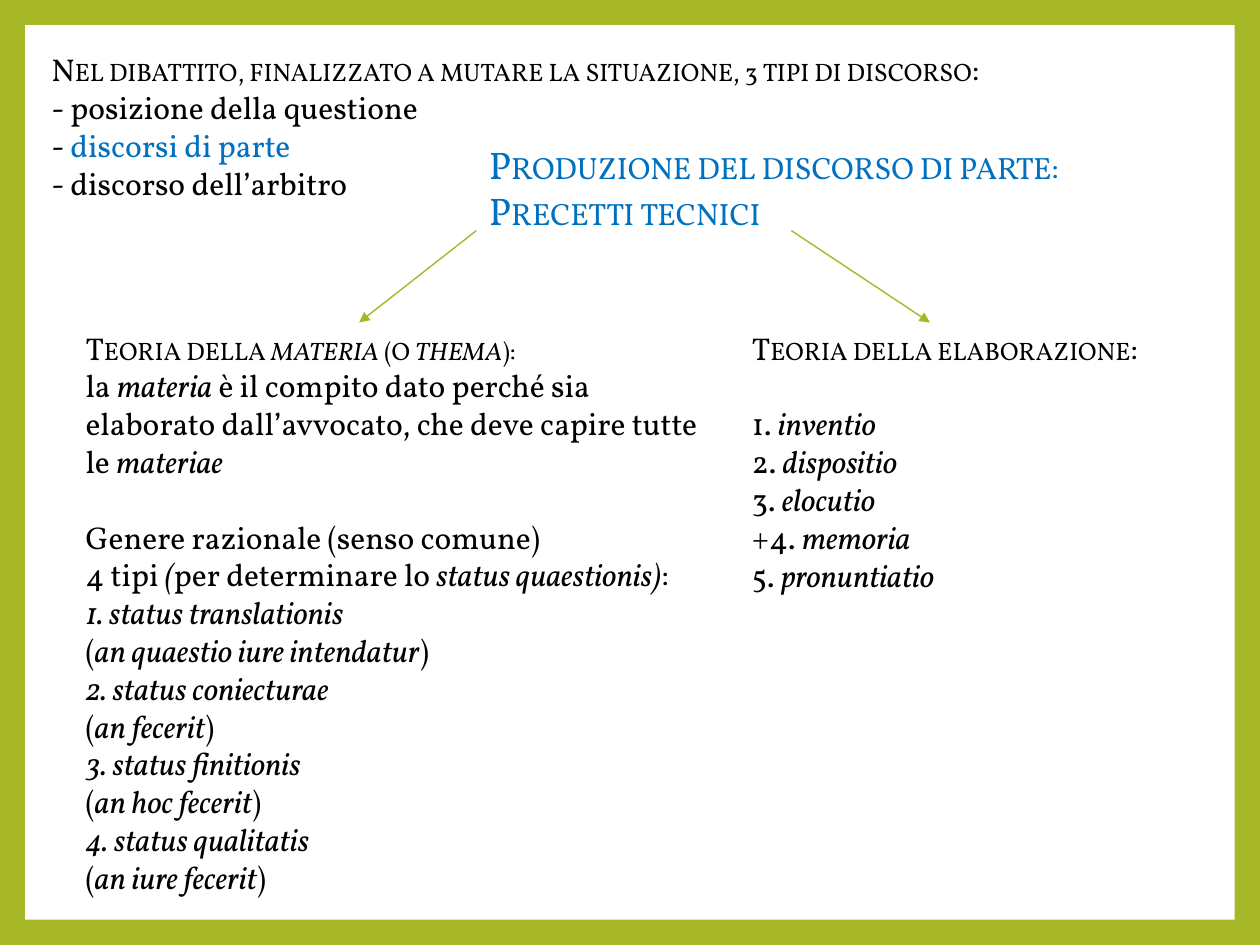
from lxml import etree
from pptx import Presentation
from pptx.dml.color import RGBColor
from pptx.enum.shapes import MSO_CONNECTOR, MSO_SHAPE
from pptx.oxml.ns import qn
from pptx.util import Pt

COLORS = {"green": "A6B727", "white": "FFFFFF", "black": "000000", "blue": "0070C0"}
FONT = "Vollkorn"
BLANK_LINE = 21.6


def rgb(name):
    return RGBColor.from_string(COLORS[name])


class SlideBuilder:
    """Holds the style and the current slide; lengths are in points."""

    def __init__(self, slide):
        self.slide = slide

    def background(self, color):
        fill = self.slide.background.fill
        fill.solid()
        fill.fore_color.rgb = rgb(color)

    def panel(self, left, top, width, height, color):
        panel = self.slide.shapes.add_shape(
            MSO_SHAPE.RECTANGLE, Pt(left), Pt(top), Pt(width), Pt(height))
        panel.shadow.inherit = False
        panel.fill.solid()
        panel.fill.fore_color.rgb = rgb(color)
        panel.line.fill.background()

    def text(self, left, top, width, height, lines, size=18, color="black", gaps=()):
        """Each line is a list of (text, flags): i italic, s small caps, b blue.

        Lines whose index is in gaps get one line of space before them.
        """
        frame = self.slide.shapes.add_textbox(
            Pt(left), Pt(top), Pt(width), Pt(height)).text_frame
        frame.word_wrap = True
        for index, line in enumerate(lines):
            paragraph = frame.add_paragraph() if index else frame.paragraphs[0]
            if index in gaps:
                paragraph.space_before = Pt(BLANK_LINE)
            for words, flags in line:
                run = paragraph.add_run()
                run.text = words
                run.font.name = FONT
                run.font.size = Pt(size)
                run.font.italic = "i" in flags
                run.font.color.rgb = rgb("blue" if "b" in flags else color)
                if "s" in flags:
                    run.font._element.set("cap", "small")

    def arrow(self, start, end, color="green", weight=0.79):
        arrow = self.slide.shapes.add_connector(
            MSO_CONNECTOR.STRAIGHT, *(Pt(value) for value in start + end))
        arrow.line.color.rgb = rgb(color)
        arrow.line.width = Pt(weight)
        etree.SubElement(arrow.line._get_or_add_ln(), qn("a:tailEnd"), type="triangle")
        etree.SubElement(arrow._element.spPr, qn("a:effectLst"))


def main():
    deck = Presentation()
    deck.slide_width, deck.slide_height = Pt(720), Pt(540)
    page = SlideBuilder(deck.slides.add_slide(deck.slide_layouts[6]))

    # Green frame around a white page
    page.background("green")
    page.panel(14.4, 14.4, 691.2, 511.2, "white")

    # Central topic
    page.text(272.2, 77, 418.3, 60.5, [
        [("Produzione del discorso di parte:", "s")],
        [("Precetti tecnici", "s")],
    ], size=22, color="blue")

    # Left branch: theory of the matter
    statuses = [
        ("translationis", "an quaestio iure intendatur"),
        ("coniecturae", "an fecerit"),
        ("finitionis", "an hoc fecerit"),
        ("qualitatis", "an iure fecerit"),
    ]
    matter = [
        [("Teoria della ", "s"), ("materia", "si"), (" (o ", "s"),
         ("thema", "si"), ("):", "s")],
        [("la ", ""), ("materia", "i"), (" è il compito dato perché sia", "")],
        [("elaborato dall’avvocato, che deve capire tutte", "")],
        [("le ", ""), ("materiae", "i")],
        [("Genere razionale (senso comune)", "")],
        [("4 tipi", ""), (" (", "i"), ("per determinare lo", ""),
         (" status quaestionis)", "i"), (":", "")],
    ]
    for number, (status, question) in enumerate(statuses, 1):
        matter.append([(f"{number}. status {status}", "i")])
        matter.append([("(", ""), (question, "i"), (")", "")])
    page.text(41.8, 184.3, 380.9, 421.9, matter, gaps=[4])

    # Right branch: theory of the elaboration
    stages = [("1. ", "inventio"), ("2. ", "dispositio"), ("3. ", "elocutio"),
              ("+4. ", "memoria"), ("5. ", "pronuntiatio")]
    elaboration = [[("Teoria della elaborazione", "s"), (":", "")]]
    elaboration += [[(number, ""), (stage, "i")] for number, stage in stages]
    page.text(422.6, 184.3, 250.6, 181.4, elaboration, gaps=[1])

    # Arrows from the topic to both branches
    page.arrow((452.2, 131.8), (531.4, 184.3))
    page.arrow((272.2, 131.8), (205.2, 184.3))

    # Kinds of speech in the debate
    page.text(22.3, 25.2, 591.1, 116.6, [
        [("Nel dibattito, finalizzato a mutare la situazione, 3 tipi di discorso", "s"),
         (":", "")],
        [("- posizione della questione", "")],
        [("- ", ""), ("discorsi di parte", "b")],
        [("- discorso dell’arbitro", "")],
    ])

    deck.save("out.pptx")


if __name__ == "__main__":
    main()
